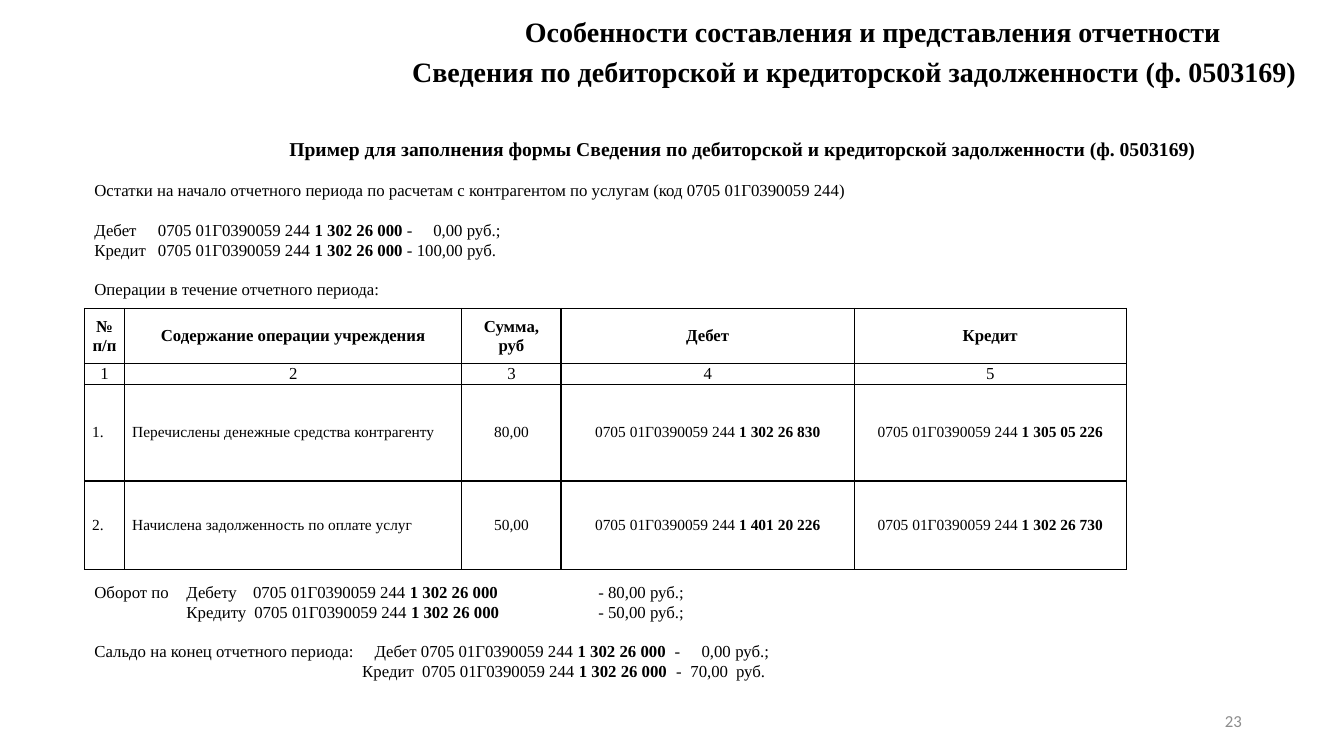
from lxml import etree
from pptx import Presentation
from pptx.dml.color import RGBColor
from pptx.enum.text import MSO_ANCHOR, PP_ALIGN
from pptx.oxml.ns import qn
from pptx.util import Cm, Pt

LEFT, CENTER, RIGHT = PP_ALIGN.LEFT, PP_ALIGN.CENTER, PP_ALIGN.RIGHT
TOP, MIDDLE = MSO_ANCHOR.TOP, MSO_ANCHOR.MIDDLE
SERIF = "Times New Roman"
BLACK = "000000"
GREY = "8C8C8C"
CODE = "0705 01Г0390059 244"
BLANK_LINE = 13.8

FORM = "Сведения по дебиторской и кредиторской задолженности (ф. 0503169)"
HEADINGS = [
    ("Особенности составления и представления отчетности", (11.33, 0.25, 21.34, 1.12), 20),
    (FORM, (10.06, 1.24, 22.94, 1.12), 20),
    (f"Пример для заполнения формы {FORM}", (5.36, 3.33, 26.72, 0.86), 14),
]
OPENING = [
    (f"Остатки на начало отчетного периода по расчетам с контрагентом по услугам (код {CODE})", [], 0),
    (f"Дебет\t{CODE} *1 302 26 000* -\t0,00 руб.;", [1.6, 8.54], BLANK_LINE),
    (f"Кредит\t{CODE} *1 302 26 000* - 100,00 руб.", [1.6], 0),
    ("Операции в течение отчетного периода:", [], BLANK_LINE),
]
CLOSING = [
    (f"Оборот по\tДебету\t{CODE} *1 302 26 000*\t- 80,00 руб.;", [2.32, 4, 12.7], 0),
    (f"\tКредиту\t{CODE} *1 302 26 000*\t- 50,00 руб.;", [2.32, 4.03, 12.7], 0),
    (f"Сальдо на конец отчетного периода:\tДебет {CODE} *1 302 26 000*\t-\t0,00\tруб.;",
     [7.06, 14.62, 15.3, 16.15], BLANK_LINE),
    (f"\tКредит\t{CODE} *1 302 26 000*\t-\t70,00\tруб.", [6.75, 8.26, 14.66, 15.02, 16.17], 0),
]
COLUMN_WIDTHS = [1.01, 8.5, 2.5, 7.39, 6.85]
ROW_HEIGHTS = [1.4, 0.51, 2.44, 2.24]
OPERATIONS = [
    ["*№ п/п*", "*Содержание операции учреждения*", "*Сумма,*\n*руб*", "*Дебет*", "*Кредит*"],
    ["1", "2", "3", "4", "5"],
    ["1.", "Перечислены денежные средства контрагенту", "80,00",
     f"{CODE} *1\u00a0302 26 830*".replace("\u00a0", " "), f"{CODE} *1 305 05 226*"],
    ["2.", "Начислена задолженность по оплате услуг", "50,00",
     f"{CODE} *1 401 20 226*", f"{CODE} *1 302 26 730*"],
]


def color(value):
    """Turn a hex string into a colour."""
    return RGBColor.from_string(value)


def write(paragraph, text, size, align=LEFT, font=SERIF, ink=BLACK):
    """Write text whose parts between asterisks are bold."""
    paragraph.alignment = align
    for index, part in enumerate(text.split("*")):
        if part:
            run = paragraph.add_run()
            run.text = part
            run.font.name = font
            run.font.size = Pt(size)
            run.font.bold = index % 2 == 1
            run.font.color.rgb = color(ink)


def set_tabs(paragraph, stops):
    """Set left tab stops given in centimetres."""
    tab_list = etree.SubElement(paragraph._p.get_or_add_pPr(), qn("a:tabLst"))
    for stop in stops:
        etree.SubElement(tab_list, qn("a:tab"), pos=str(Cm(stop)), algn="l")


def add_frame(slide, box, anchor):
    """Add a wrapping text box and return its text frame."""
    frame = slide.shapes.add_textbox(*map(Cm, box)).text_frame
    frame.word_wrap = True
    frame.vertical_anchor = anchor
    return frame


def add_line(slide, text, box, size, align=CENTER, anchor=TOP, font=SERIF, ink=BLACK):
    """Add a text box with one paragraph."""
    write(add_frame(slide, box, anchor).paragraphs[0], text, size, align, font, ink)


def add_balances(slide, lines, box):
    """Add the balance lines with their tab stops."""
    frame = add_frame(slide, box, MIDDLE)
    for index, (text, stops, space) in enumerate(lines):
        paragraph = frame.add_paragraph() if index else frame.paragraphs[0]
        if space:
            paragraph.space_before = Pt(space)
        if stops:
            set_tabs(paragraph, stops)
        write(paragraph, text, 12)


def set_borders(cell):
    """Draw a thin black border on every side of a cell."""
    properties = cell._tc.get_or_add_tcPr()
    for index, side in enumerate(("a:lnL", "a:lnR", "a:lnT", "a:lnB")):
        line = etree.Element(qn(side), w=str(Pt(1)))
        fill = etree.SubElement(line, qn("a:solidFill"))
        etree.SubElement(fill, qn("a:srgbClr"), val=BLACK)
        properties.insert(index, line)


def add_operations(slide, left, top):
    """Add the table of operations."""
    table = slide.shapes.add_table(
        len(ROW_HEIGHTS), len(COLUMN_WIDTHS), Cm(left), Cm(top),
        Cm(sum(COLUMN_WIDTHS)), Cm(sum(ROW_HEIGHTS))).table
    for column, width in zip(table.columns, COLUMN_WIDTHS):
        column.width = Cm(width)
    for row_index, texts in enumerate(OPERATIONS):
        table.rows[row_index].height = Cm(ROW_HEIGHTS[row_index])
        is_entry = row_index > 1
        for column_index, text in enumerate(texts):
            cell = table.cell(row_index, column_index)
            cell.fill.background()
            set_borders(cell)
            cell.vertical_anchor = MIDDLE
            cell.margin_left = cell.margin_right = Cm(0.19)
            cell.margin_top = cell.margin_bottom = 0
            align = LEFT if is_entry and column_index < 2 else CENTER
            for index, line in enumerate(text.split("\n")):
                frame = cell.text_frame
                paragraph = frame.add_paragraph() if index else frame.paragraphs[0]
                write(paragraph, line, 11 if is_entry else 12, align)


def main():
    """Build the slide and save it."""
    presentation = Presentation()
    presentation.slide_width, presentation.slide_height = Cm(33.87), Cm(19.05)
    slide = presentation.slides.add_slide(presentation.slide_layouts[6])
    for text, box, size in HEADINGS:
        add_line(slide, f"*{text}*", box, size)
    add_balances(slide, OPENING, (2.13, 4.37, 27.81, 3.33))
    add_operations(slide, 2.13, 7.77)
    add_balances(slide, CLOSING, (2.13, 14.5, 23.09, 2.82))
    add_line(slide, "23", (23.93, 17.65, 7.62, 1.02), 12, RIGHT, MIDDLE, "Calibri", GREY)
    presentation.save("out.pptx")


if __name__ == "__main__":
    main()
